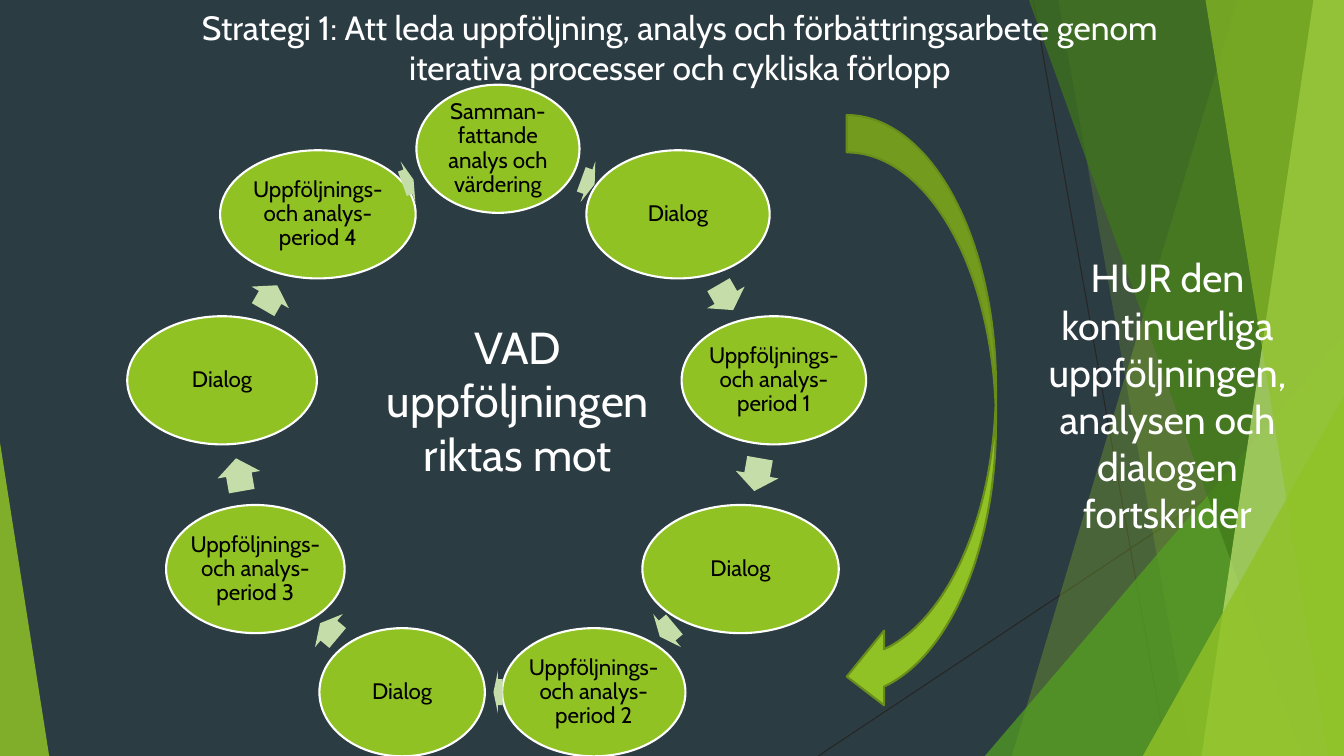
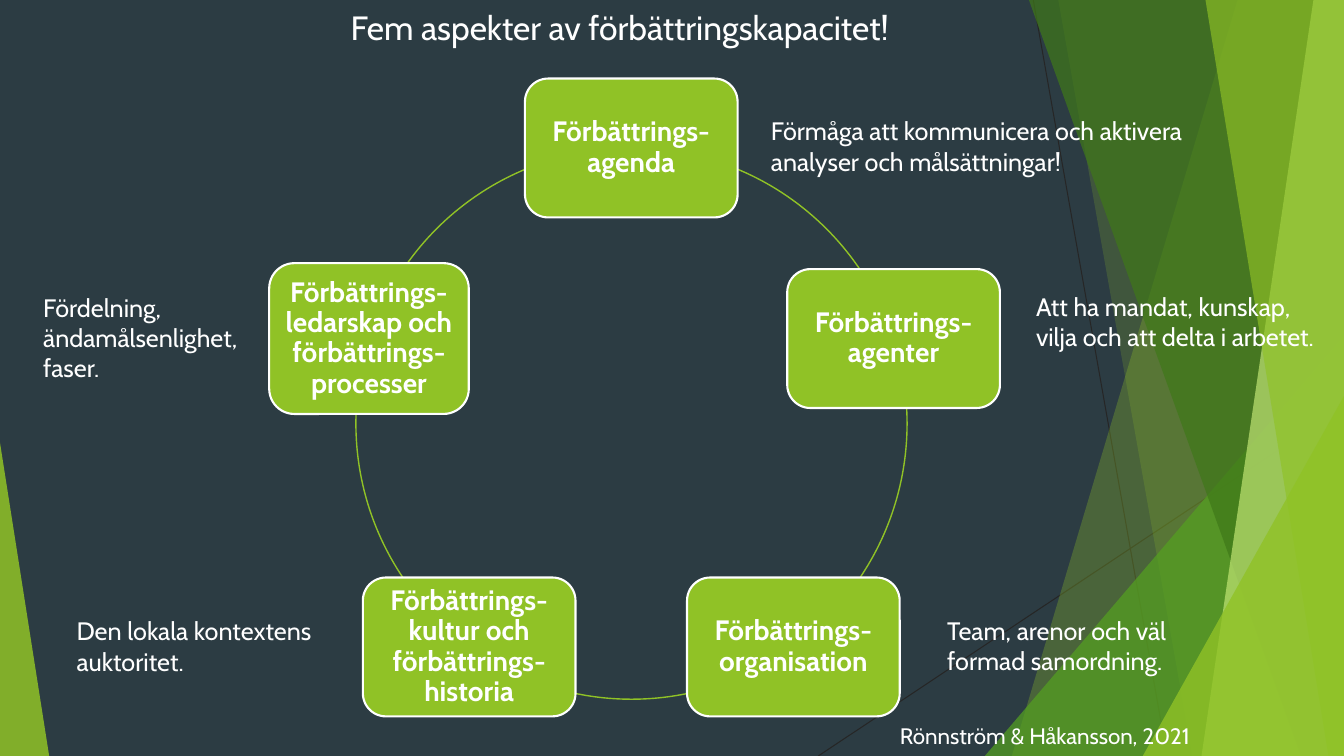
import math

from lxml import etree
from pptx import Presentation
from pptx import util as u
from pptx.dml import color
from pptx.enum import shapes, text
from pptx.oxml import ns

Cm = u.Cm
Kind = shapes.MSO_SHAPE
Side = text.PP_ALIGN
THEME = {
    "font": "Cabin", "back": "2C3C43", "white": "FFFFFF", "black": "000000",
    "lime": "90C226", "oval": "90C223", "pale": "C5DDA8", "rim": "698D1B",
    "leaf": "54A021", "moss": "3F7819", "mint": "C0E474", "wire": "262626",
    "large": 32, "mid": 28, "title": 24, "box": 20, "note": 18, "small": 16,
    "edge": 1.5, "ring": 1, "hair": 0.75,
}
WIDE, HIGH = 33.87, 19.05


def paint(shape, hue=None, edge=None, size="edge", alpha=None):
    shape.shadow.inherit = False
    for fill, name in ((shape.fill, hue), (shape.line.fill, edge)):
        if name:
            fill.solid()
            fill.fore_color.rgb = color.RGBColor.from_string(THEME[name])
        else:
            fill.background()
    if edge:
        shape.line.width = u.Pt(THEME[size])
    if alpha:
        tint = shape._element.spPr.find(".//" + ns.qn("a:srgbClr"))
        etree.SubElement(tint, ns.qn("a:alpha"), val=str(alpha * 1000))


def say(shape, words, size, side=Side.CENTER, hue="white", bold=False, space=1.0, **form):
    frame = shape.text_frame
    frame.text = words
    for key, val in {"word_wrap": True, **form}.items():
        setattr(frame, key, val)
    look = {"name": THEME["font"], "size": u.Pt(THEME[size]), "bold": bold}
    for para in frame.paragraphs:
        para.alignment, para.line_spacing = side, space
        for run in para.runs:
            for key, val in look.items():
                setattr(run.font, key, val)
            run.font.color.rgb = color.RGBColor.from_string(THEME[hue])


deck = Presentation()
deck.slide_width, deck.slide_height = Cm(WIDE), Cm(HIGH)
base = deck.slide_layouts[6]
for hold in list(base.placeholders):
    hold._element.getparent().remove(hold._element)
base.background.fill.solid()
base.background.fill.fore_color.rgb = color.RGBColor.from_string(THEME["back"])
cycle, five = [deck.slides.add_slide(base) for _ in range(2)]

art = cycle.shapes.add_group_shape()
for ends in ((26.04, 0, 29.41, HIGH), (WIDE, 10.24, 20.62, HIGH)):
    wire = art.shapes.add_connector(shapes.MSO_CONNECTOR.STRAIGHT, *map(Cm, ends))
    wire.line.color.rgb = color.RGBColor.from_string(THEME["wire"])
    wire.line.width = u.Pt(THEME["hair"])
    etree.SubElement(wire._element.spPr, ns.qn("a:effectLst"))

panes = [
    ("band", "lime", 30, (31.19, 25.5)),
    ("band", "lime", 20, (26.67, 30.05)),
    ("peak", "leaf", 72, (24.82, 8.46, WIDE, 1)),
    ("band", "moss", 70, (25.93, 32.79)),
    ("band", "mint", 70, (33.1, 30.28)),
    ("band", "lime", 65, (30.38, 33.48)),
    ("peak", "lime", 80, (28.8, 9.98, WIDE, 1)),
    ("peak", "lime", 85, (0, 11.15, 1.24, 0)),
]
for kind, hue, alpha, place in panes:
    if kind == "band":
        top, foot = place
        pen = art.shapes.build_freeform(Cm(top), 0)
        pen.add_line_segments([(Cm(x), Cm(y)) for x, y in ((WIDE, 0), (WIDE, HIGH), (foot, HIGH))])
        pane = pen.convert_to_shape()
    else:
        left, top, right, tip = place
        pane = art.shapes.add_shape(
            Kind.ISOSCELES_TRIANGLE, Cm(left), Cm(top), Cm(right - left), Cm(HIGH - top))
        pane.adjustments[0] = tip
    paint(pane, hue, alpha=alpha)
base.shapes._spTree.append(art._element)

flat = dict.fromkeys(("margin_left", "margin_right", "margin_top", "margin_bottom"), Cm(0.05))
phase = "Uppföljnings-\voch analys-\vperiod {}"
steps = [
    ("Samman-\vfattande\vanalys och\vvärdering", 4.11, 0.36),
    ("Dialog", 4.62, 0.74),
    (phase.format(1), 4.65, 0.84),
    ("Dialog", 4.95, 0.48),
    (phase.format(2), 4.62, 0.23),
    ("Dialog", 4.17, 0.58),
    (phase.format(3), 4.5, 0.84),
    ("Dialog", 4.78, 0.71),
    (phase.format(4), 4.93, 0.3),
]
turn = 360 / len(steps)
midx, midy, tall, thick = 12.55, 10.81, 3.23, 1.09
for i, (words, wide, long) in enumerate(steps):
    ang = math.radians(i * turn)
    x, y = midx + 7.06 * math.sin(ang), midy - 7.06 * math.cos(ang)
    oval = cycle.shapes.add_shape(
        Kind.OVAL, Cm(x - wide / 2), Cm(y - tall / 2), Cm(wide), Cm(tall))
    paint(oval, "oval", "white")
    say(oval, words, "small", hue="black", space=0.9, word_wrap=False,
        vertical_anchor=text.MSO_ANCHOR.MIDDLE, **flat)
    ang = math.radians((i + 0.5) * turn)
    x, y = midx + 6.63 * math.sin(ang), midy - 6.63 * math.cos(ang)
    arrow = cycle.shapes.add_shape(
        Kind.RIGHT_ARROW, Cm(x - long / 2), Cm(y - thick / 2), Cm(long), Cm(thick))
    arrow.adjustments[0], arrow.adjustments[1] = 0.6, 0.5
    arrow.rotation = (i + 0.5) * turn
    paint(arrow, "pale")

sweep = cycle.shapes.add_shape(Kind.CURVED_LEFT_ARROW, Cm(21.34), Cm(2.9), Cm(3.76), Cm(15.09))
for i, val in enumerate((0.25, 0.5, 0.25)):
    sweep.adjustments[i] = val
paint(sweep, "lime", "rim")

hub = five.shapes.add_shape(Kind.OVAL, Cm(8.97), Cm(3.73), Cm(13.89), Cm(13.89))
paint(hub, edge="lime", size="ring")
parts = [
    ("Förbättrings-agenda", 5.36, 3.5),
    ("Förbättrings-agenter", 5.36, 3.5),
    ("Förbättrings-organisation", 5.36, 3.5),
    ("Förbättrings-kultur och förbättrings-historia", 5.36, 3.5),
    ("Förbättrings-ledarskap och förbättrings-processer", 5.03, 3.8),
]
for i, (words, wide, tall) in enumerate(parts):
    ang = math.tau * i / len(parts)
    x, y = 15.91 + 6.95 * math.sin(ang), 10.68 - 6.95 * math.cos(ang)
    box = five.shapes.add_shape(
        Kind.ROUNDED_RECTANGLE, Cm(x - wide / 2), Cm(y - tall / 2), Cm(wide), Cm(tall))
    paint(box, "lime", "white")
    say(box, words, "box", bold=True, space=0.9, vertical_anchor=text.MSO_ANCHOR.MIDDLE,
        **dict.fromkeys(flat, Cm(0.2)))

notes = [
    (cycle, "Strategi 1: Att leda uppföljning, analys och förbättringsarbete genom\n"
     "iterativa processer och cykliska förlopp", "title", Side.CENTER, (0.2, 0.05, WIDE, 2.31)),
    (cycle, "VAD uppföljningen riktas mot", "large", Side.CENTER, (8.99, 7.92, 8.13, 4.37)),
    (cycle, "HUR den kontinuerliga uppföljningen, analysen och dialogen fortskrider",
     "mid", Side.CENTER, (25.65, 6.27, 7.54, 7.44)),
    (five, "Fem aspekter av förbättringskapacitet!", "title", Side.LEFT, (8.59, 0.05, 17.68, 1.27)),
    (five, "Förmåga att kommunicera och aktivera analyser och målsättningar!",
     "note", Side.LEFT, (19.18, 2.79, 10.97, 1.8)),
    (five, "Att ha mandat, kunskap, vilja och att delta i arbetet.",
     "note", Side.LEFT, (25.86, 7.21, 7.65, 2.57)),
    (five, "Team, arenor och väl formad samordning.",
     "note", Side.LEFT, (23.62, 15.37, 7.87, 1.8)),
    (five, "Den lokala kontextens auktoritet.", "note", Side.LEFT, (1.68, 15.39, 6.88, 1.8)),
    (five, "Fördelning, ändamålsenlighet, faser.", "note", Side.LEFT, (0.84, 7.24, 6.02, 2.57)),
    (five, "Rönnström & Håkansson, 2021", "small", Side.LEFT, (22.43, 18.06, 11.4, 0.94)),
]
for page, words, size, side, place in notes:
    say(page.shapes.add_textbox(*map(Cm, place)), words, size, side)

deck.save("out.pptx")
